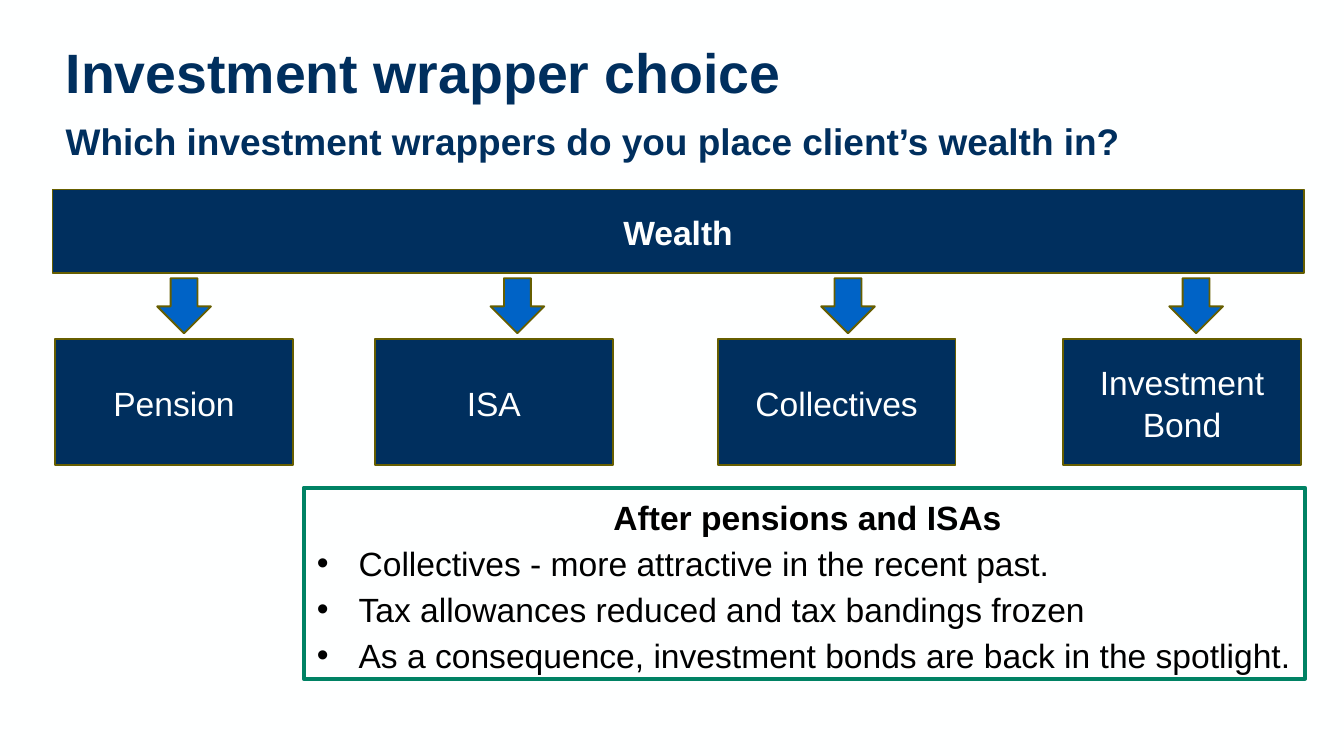
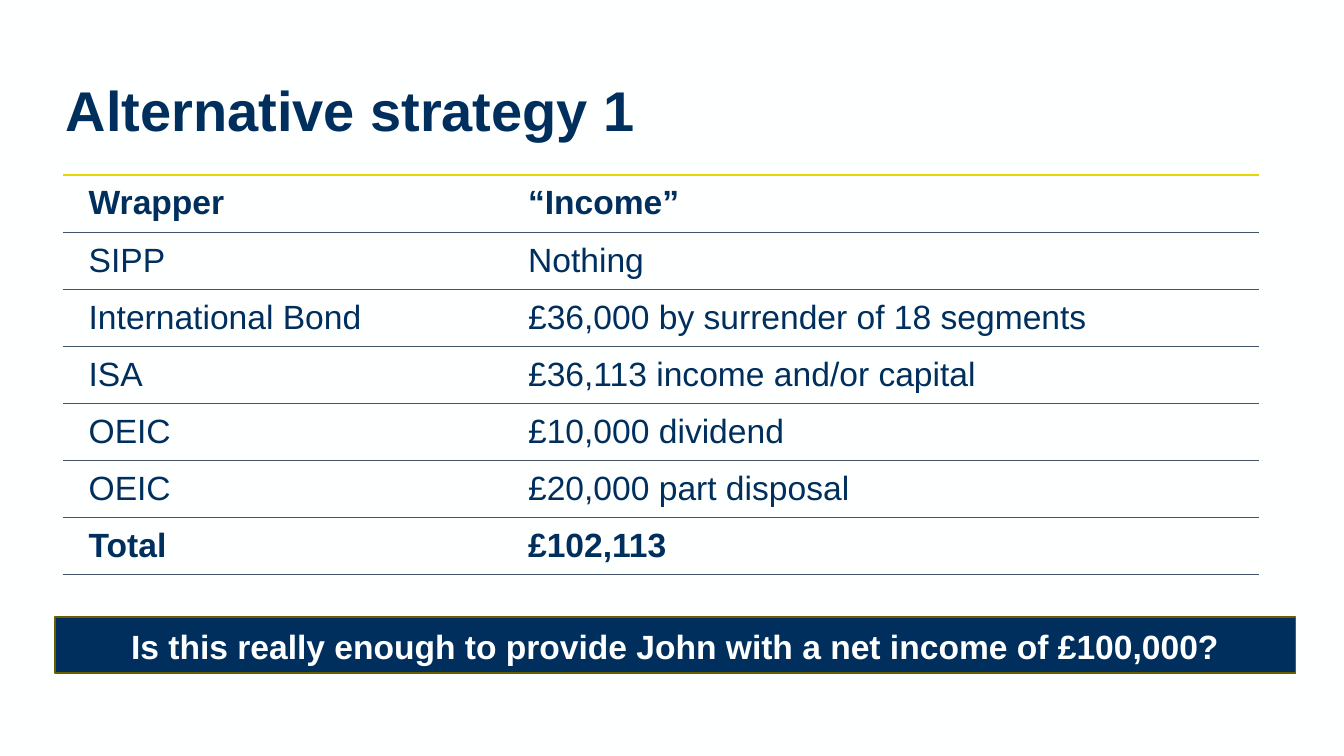
from lxml import etree
from pptx import Presentation
from pptx.dml.color import RGBColor
from pptx.enum.shapes import MSO_SHAPE
from pptx.enum.text import MSO_ANCHOR, PP_ALIGN
from pptx.oxml.ns import qn
from pptx.util import Pt

RECTANGLE, DOWN_ARROW = MSO_SHAPE.RECTANGLE, MSO_SHAPE.DOWN_ARROW
TOP, MIDDLE = MSO_ANCHOR.TOP, MSO_ANCHOR.MIDDLE
LEFT, CENTER = PP_ALIGN.LEFT, PP_ALIGN.CENTER

COLORS = {
    "paper": "FEFFFF", "navy": "002F5E", "outline": "665E00", "arrow": "0063C6",
    "green": "008264", "black": "000000", "yellow": "E8D600", "rule": "44546A",
}
FONT = "Arial"
BODY_SIZE = 18
LINE_SPACING = 1.05
TITLE_BOX = (28.08, 21.6, 670.32, 78.48)

WRAPPERS = [
    ("Pension", 0, 54.72),
    ("ISA", 171.36, 233.28),
    ("Collectives", 355, 410.4),
    ("Investment Bond", 540, 596.88),
]
TAKEAWAYS = [
    "Collectives - more attractive in the recent past.",
    "Tax allowances reduced and tax bandings frozen",
    "As a consequence, investment bonds are back in the spotlight.",
]
INCOME_ROWS = [
    ("Wrapper", "“Income”"),
    ("SIPP", "Nothing"),
    ("International Bond", "£36,000 by surrender of 18 segments"),
    ("ISA", "£36,113 income and/or capital"),
    ("OEIC", "£10,000 dividend"),
    ("OEIC", "£20,000 part disposal"),
    ("Total", "£102,113"),
]


def rgb(name):
    """Return the named palette colour."""
    return RGBColor.from_string(COLORS[name])


def points(box):
    """Turn a box of plain numbers into lengths."""
    return [Pt(value) for value in box]


def style_font(font, color, size=BODY_SIZE, bold=False):
    """Apply the deck typeface to a font."""
    font.name, font.size, font.bold = FONT, Pt(size), bold
    font.color.rgb = rgb(color)


def add_panel(slide, box, fill="navy", line="outline", width=1, kind=RECTANGLE):
    """Add a flat outlined shape, unfilled when fill is None."""
    shape = slide.shapes.add_shape(kind, *points(box))
    shape.shadow.inherit = False
    if fill:
        shape.fill.solid()
        shape.fill.fore_color.rgb = rgb(fill)
    else:
        shape.fill.background()
    shape.line.color.rgb = rgb(line)
    shape.line.width = Pt(width)
    return shape


def add_label(slide, box, text, bold=False):
    """Add a navy box with a centred label."""
    text_frame = add_panel(slide, box).text_frame
    text_frame.word_wrap = True
    text_frame.vertical_anchor = MIDDLE
    text_frame.text = text
    paragraph = text_frame.paragraphs[0]
    paragraph.alignment = CENTER
    paragraph.line_spacing = LINE_SPACING
    style_font(paragraph.runs[0].font, "paper", bold=bold)


def add_title(slide, box, lines, sizes, anchor):
    """Add the slide title, with one size for each line."""
    text_frame = slide.shapes.add_textbox(*points(box)).text_frame
    text_frame.word_wrap = True
    text_frame.vertical_anchor = anchor
    paragraph = text_frame.paragraphs[0]
    paragraph.text = "\v".join(lines)
    paragraph.line_spacing = Pt(31)
    for run, size in zip(paragraph.runs, sizes):
        style_font(run.font, "navy", size, True)


def add_wrapper_row(slide, box):
    """Add the wrappers, each under its arrow, inside the box."""
    left, top, _, height = box
    label_height = 67.68
    for name, label_left, arrow_left in WRAPPERS:
        add_label(slide, (left + label_left, top + height - label_height, 127.44, label_height), name)
        add_panel(slide, (left + arrow_left, top, 28.8, 29.52), "arrow", kind=DOWN_ARROW)


def add_takeaways(slide, box):
    """Add the green box with a heading and bullets."""
    text_frame = add_panel(slide, box, None, "green", 2.25).text_frame
    text_frame.word_wrap = True
    text_frame.vertical_anchor = TOP
    text_frame.margin_right = Pt(3.6)
    text_frame.text = "\n".join(["After pensions and ISAs"] + TAKEAWAYS)
    for index, paragraph in enumerate(text_frame.paragraphs):
        is_heading = index == 0
        paragraph.alignment = CENTER if is_heading else LEFT
        paragraph.line_spacing = LINE_SPACING
        paragraph.space_after = Pt(2)
        if not is_heading:
            properties = paragraph._p.get_or_add_pPr()
            properties.set("marL", str(Pt(22.32)))
            properties.set("indent", str(Pt(-22.32)))
            etree.SubElement(properties, qn("a:buFont"), typeface=FONT)
            etree.SubElement(properties, qn("a:buChar"), char="•")
        style_font(paragraph.runs[0].font, "black", bold=is_heading)


def set_borders(cell, top, bottom):
    """Rule a cell above and below, leaving its sides open."""
    properties = cell._tc.get_or_add_tcPr()
    edges = [("a:lnL", None), ("a:lnR", None), ("a:lnT", top), ("a:lnB", bottom)]
    for index, (tag, rule) in enumerate(edges):
        edge = etree.Element(qn(tag))
        if rule:
            color, width = rule
            edge.set("w", str(Pt(width)))
            fill = etree.SubElement(edge, qn("a:solidFill"))
            etree.SubElement(fill, qn("a:srgbClr"), val=COLORS[color])
        else:
            edge.set("w", "0")
            etree.SubElement(edge, qn("a:noFill"))
        properties.insert(index, edge)


def add_income_table(slide, box):
    """Add the table of income by wrapper."""
    last = len(INCOME_ROWS) - 1
    table = slide.shapes.add_table(len(INCOME_ROWS), 2, *points(box)).table
    table.first_row = table.horz_banding = False
    table.columns[0].width = Pt(235.44)
    table.columns[1].width = Pt(box[2] - 235.44)
    thin = ("rule", 0.25)
    for row_index, row in enumerate(INCOME_ROWS):
        table.rows[row_index].height = Pt(box[3] / len(INCOME_ROWS))
        for column_index, text in enumerate(row):
            cell = table.cell(row_index, column_index)
            cell.text = text
            cell.fill.background()
            cell.vertical_anchor = MIDDLE
            cell.margin_left = cell.margin_right = Pt(13.68)
            cell.margin_top = cell.margin_bottom = Pt(4.5)
            style_font(cell.text_frame.paragraphs[0].runs[0].font, "navy", bold=row_index in (0, last))
            set_borders(
                cell,
                ("yellow", 1) if row_index == 0 else thin,
                ("rule", 0.5) if row_index == last else thin,
            )


def add_slide(presentation):
    """Add a blank slide on the deck background."""
    slide = presentation.slides.add_slide(presentation.slide_layouts[6])
    slide.background.fill.solid()
    slide.background.fill.fore_color.rgb = rgb("paper")
    return slide


def build_wrapper_slide(presentation):
    """Build the slide on the choice of wrapper."""
    slide = add_slide(presentation)
    lines = ["Investment wrapper choice", "Which investment wrappers do you place client’s wealth in?"]
    add_title(slide, TITLE_BOX, lines, [29.7, 19.8], TOP)
    add_label(slide, (28.08, 101.52, 670.32, 44.64), "Wealth", True)
    add_wrapper_row(slide, (29.52, 149.04, 667.44, 100.08))
    add_takeaways(slide, (162.72, 261.36, 536.4, 102.24))


def build_strategy_slide(presentation):
    """Build the slide on the alternative strategy."""
    slide = add_slide(presentation)
    add_title(slide, TITLE_BOX, ["Alternative strategy 1"], [30], MIDDLE)
    add_income_table(slide, (33.84, 93.6, 640.8, 208.25))
    question = "Is this really enough to provide John with a net income of £100,000?"
    add_label(slide, (29.52, 330.48, 664.56, 30.24), question, True)


def main():
    """Build and save the presentation."""
    presentation = Presentation()
    presentation.slide_width, presentation.slide_height = Pt(720), Pt(405)
    build_wrapper_slide(presentation)
    build_strategy_slide(presentation)
    presentation.save("out.pptx")


if __name__ == "__main__":
    main()
